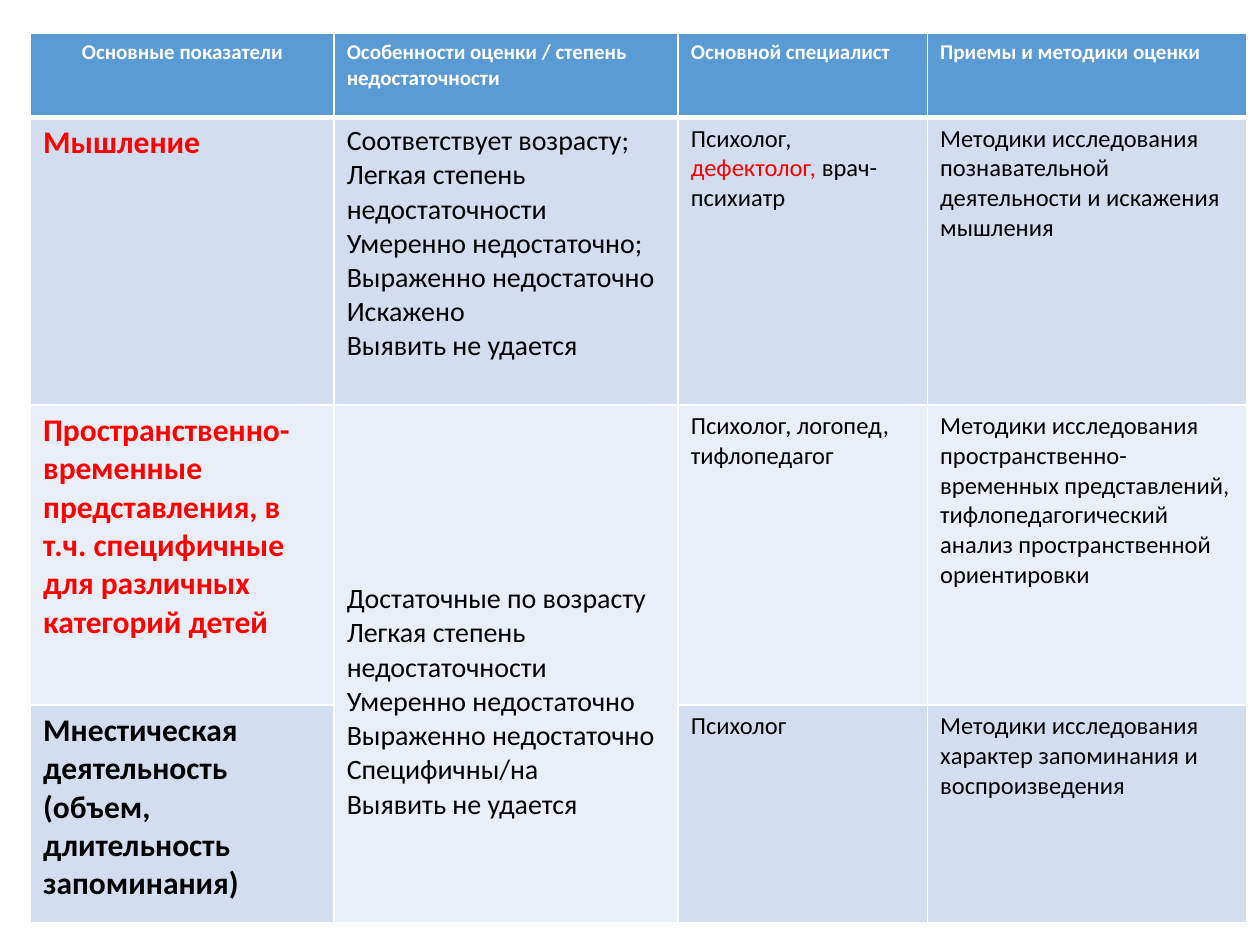
from lxml import etree
from pptx import Presentation
from pptx.dml.color import RGBColor
from pptx.enum.text import PP_ALIGN
from pptx.oxml.ns import qn
from pptx.util import Pt

WHITE = RGBColor(0xFF, 0xFF, 0xFF)
BLACK = RGBColor(0x00, 0x00, 0x00)
RED = RGBColor(0xFF, 0x00, 0x00)
HEADER_BLUE = RGBColor(0x5B, 0x9B, 0xD5)
BAND_DARK = RGBColor(0xD2, 0xDE, 0xEF)
BAND_LIGHT = RGBColor(0xEA, 0xEF, 0xF7)

# Text formats by role
HEADING = {"size": Pt(12), "bold": True, "color": WHITE}
INDICATOR = {"size": Pt(18), "bold": True, "color": BLACK}
KEY_INDICATOR = {**INDICATOR, "color": RED}
DEGREE = {"size": Pt(16), "bold": False, "color": BLACK}
DETAIL = {"size": Pt(14), "bold": False, "color": BLACK}
KEY_DETAIL = {**DETAIL, "color": RED}

COLUMN_WIDTHS = [173.5, 196.6, 142.5, 182.2]
ROW_HEIGHTS = [48.2, 164.2, 171.4, 124.6]
ROW_FILLS = [HEADER_BLUE, BAND_DARK, BAND_LIGHT, BAND_DARK]

HEADINGS = [
    "Основные показатели",
    "Особенности оценки / степень недостаточности",
    "Основной специалист",
    "Приемы и методики оценки",
]
THINKING_DEGREES = [
    "Соответствует возрасту;",
    "Легкая степень недостаточности",
    "Умеренно недостаточно;",
    "Выраженно недостаточно",
    "Искажено",
    "Выявить не удается",
]
SHARED_DEGREES = [
    "Достаточные по возрасту",
    "Легкая степень недостаточности",
    "Умеренно недостаточно",
    "Выраженно недостаточно",
    "Специфичны/на",
    "Выявить не удается",
]


def plain(style, *lines):
    """One paragraph per line, each a single run."""
    return [[(line, style)] for line in lines]


# Each cell is a list of paragraphs, each paragraph a list of (text, style)
ROWS = [
    [plain(HEADING, heading) for heading in HEADINGS],
    [
        plain(KEY_INDICATOR, "Мышление"),
        plain(DEGREE, *THINKING_DEGREES),
        [[("Психолог, ", DETAIL), ("дефектолог, ", KEY_DETAIL),
          ("врач-психиатр", DETAIL)]],
        plain(DETAIL, "Методики исследования познавательной деятельности "
                      "и искажения мышления"),
    ],
    [
        plain(KEY_INDICATOR, "Пространственно-временные представления, в т.ч. "
                             "специфичные для различных категорий детей"),
        plain(DEGREE, *SHARED_DEGREES),
        plain(DETAIL, "Психолог, логопед, тифлопедагог"),
        plain(DETAIL,
              "Методики исследования пространственно-временных представлений,",
              "тифлопедагогический анализ пространственной ориентировки"),
    ],
    [
        plain(INDICATOR, "Мнестическая деятельность (объем, длительность "
                         "запоминания)"),
        None,
        plain(DETAIL, "Психолог"),
        plain(DETAIL, "Методики исследования характер запоминания "
                      "и воспроизведения"),
    ],
]


class SlideBuilder:
    font_name = "Calibri"
    margins = {"margin_left": Pt(7.2), "margin_right": Pt(7.2),
               "margin_top": Pt(3.6), "margin_bottom": Pt(3.6)}

    def __init__(self, slide):
        self.slide = slide

    def table(self, left, top, widths, heights):
        table = self.slide.shapes.add_table(
            len(heights), len(widths), Pt(left), Pt(top),
            Pt(sum(widths)), Pt(sum(heights))).table
        for column, width in zip(table.columns, widths):
            column.width = Pt(width)
        for row, height in zip(table.rows, heights):
            row.height = Pt(height)
        return table

    def cell(self, cell, paragraphs, fill, top_line=1, bottom_line=1):
        for name, value in self.margins.items():
            setattr(cell, name, value)
        self.borders(cell, {"lnL": 1, "lnR": 1,
                            "lnT": top_line, "lnB": bottom_line})
        cell.fill.solid()
        cell.fill.fore_color.rgb = fill
        frame = cell.text_frame
        for index, runs in enumerate(paragraphs or []):
            paragraph = frame.add_paragraph() if index else frame.paragraphs[0]
            for text, style in runs:
                self.run(paragraph, text, style)

    def run(self, paragraph, text, style):
        run = paragraph.add_run()
        run.text = text
        run.font.name = self.font_name
        for name, value in style.items():
            if name == "color":
                run.font.color.rgb = value
            else:
                setattr(run.font, name, value)

    def borders(self, cell, widths):
        properties = cell._tc.get_or_add_tcPr()
        for tag, width in widths.items():
            line = etree.SubElement(properties, qn(f"a:{tag}"), w=str(Pt(width)))
            solid = etree.SubElement(line, qn("a:solidFill"))
            etree.SubElement(solid, qn("a:srgbClr"), val=str(WHITE))


def main():
    presentation = Presentation()
    presentation.slide_width, presentation.slide_height = Pt(720), Pt(540)
    builder = SlideBuilder(
        presentation.slides.add_slide(presentation.slide_layouts[6]))

    # Assessment table; a heavier line separates the header
    assessment = builder.table(17.5, 19, COLUMN_WIDTHS, ROW_HEIGHTS)
    for row, (contents, fill) in enumerate(zip(ROWS, ROW_FILLS)):
        for column, paragraphs in enumerate(contents):
            builder.cell(assessment.cell(row, column), paragraphs, fill,
                         top_line=3 if row == 1 else 1,
                         bottom_line=3 if row == 0 else 1)

    # Centred first heading
    assessment.cell(0, 0).text_frame.paragraphs[0].alignment = PP_ALIGN.CENTER

    # Degrees shared by the last two indicators, set lower in their cell
    shared_degrees = assessment.cell(2, 1)
    shared_degrees.merge(assessment.cell(3, 1))
    shared_degrees.margin_top = Pt(101.2)

    presentation.save("out.pptx")


if __name__ == "__main__":
    main()
